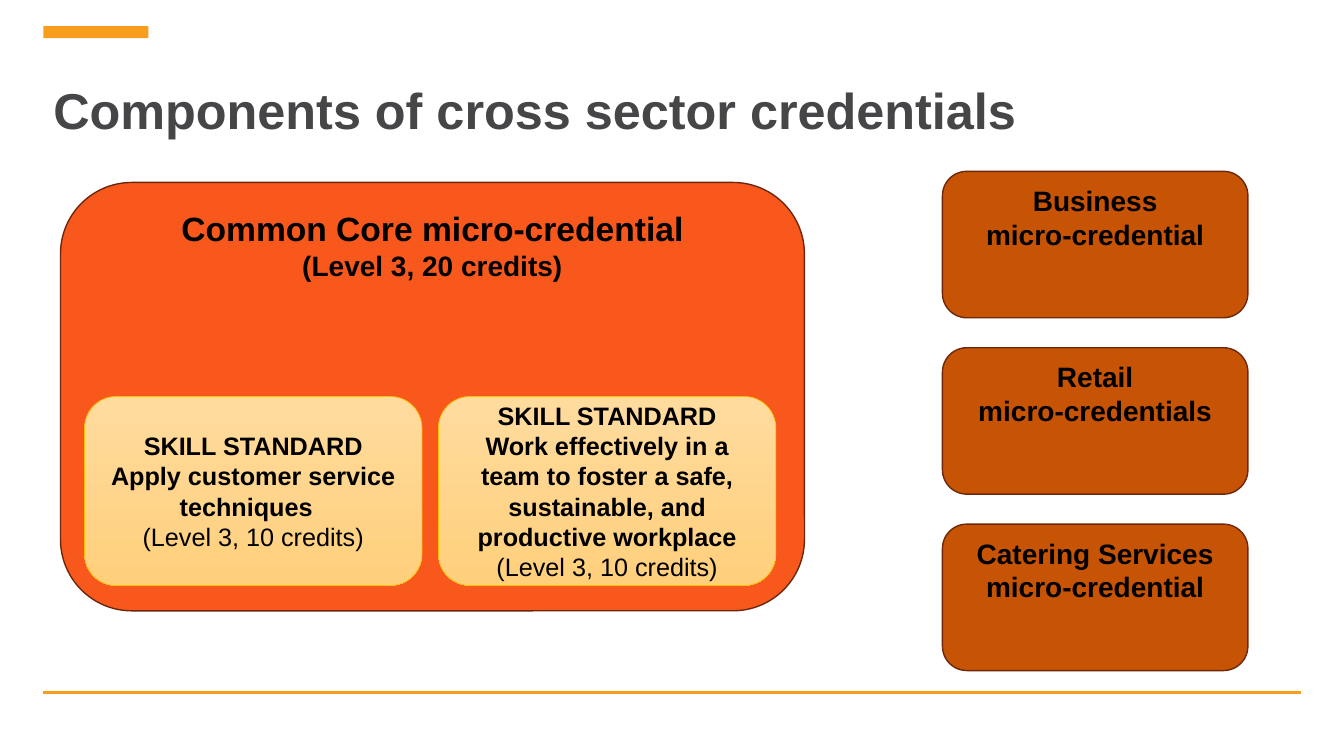
from dataclasses import dataclass

from lxml import etree
from pptx import Presentation
from pptx.dml.color import RGBColor as RGB
from pptx.enum.shapes import MSO_CONNECTOR as CONN, MSO_SHAPE as SHAPE
from pptx.enum.text import MSO_ANCHOR as ANCHOR, PP_ALIGN as ALIGN
from pptx.oxml.ns import qn
from pptx.util import Pt


@dataclass(frozen=True)
class Theme:
    font: str = "Arial"
    ink: str = "000000"
    title: str = "464547"
    accent: str = "F99D1C"
    core: str = "F9581D"
    sector: str = "C65404"
    edge: str = "6D270D"
    skill: tuple = ("FFDB9E", "FFD07C")
    skill_edge: str = "FFC000"
    title_size: int = 36
    core_size: int = 24
    sector_size: int = 20
    skill_size: int = 18


class Deck:
    """Draws themed elements on one slide, with all lengths in points."""

    def __init__(self, theme):
        self.t = theme
        self.prs = Presentation()
        self.prs.slide_width, self.prs.slide_height = Pt(960), Pt(540)
        self.s = self.prs.slides.add_slide(self.prs.slide_layouts[6])

    def add_text(self, tf, lines, color, align=ALIGN.CENTER, anchor=ANCHOR.TOP):
        tf.word_wrap = True
        tf.vertical_anchor = anchor
        for i, (text, size, bold) in enumerate(lines):
            p = tf.add_paragraph() if i else tf.paragraphs[0]
            p.alignment = align
            r = p.add_run()
            r.text = text
            r.font.name, r.font.size, r.font.bold = self.t.font, Pt(size), bold
            r.font.color.rgb = RGB.from_string(color)

    def title(self, text, x, y, w, h):
        tf = self.s.shapes.add_textbox(Pt(x), Pt(y), Pt(w), Pt(h)).text_frame
        line = (text, self.t.title_size, True)
        self.add_text(tf, [line], self.t.title, ALIGN.LEFT, ANCHOR.MIDDLE)
        tf.paragraphs[0].line_spacing = 0.9

    def rule(self, x1, x2, y, width):
        c = self.s.shapes.add_connector(CONN.STRAIGHT, Pt(x1), Pt(y), Pt(x2), Pt(y))
        c.line.color.rgb = RGB.from_string(self.t.accent)
        c.line.width = Pt(width)
        etree.SubElement(c._element.spPr, qn("a:effectLst"))

    def shape(self, kind, x, y, w, h, edge=None, width=1):
        sp = self.s.shapes.add_shape(kind, Pt(x), Pt(y), Pt(w), Pt(h))
        sp.shadow.inherit = False
        if edge:
            sp.line.color.rgb = RGB.from_string(edge)
            sp.line.width = Pt(width)
        else:
            sp.line.fill.background()
        return sp

    def bar(self, x, y, w, h):
        sp = self.shape(SHAPE.RECTANGLE, x, y, w, h)
        sp.fill.solid()
        sp.fill.fore_color.rgb = RGB.from_string(self.t.accent)

    def credential(self, x, y, w, h, fill, lines):
        sp = self.shape(SHAPE.FLOWCHART_ALTERNATE_PROCESS, x, y, w, h, self.t.edge)
        sp.fill.solid()
        sp.fill.fore_color.rgb = RGB.from_string(fill)
        self.add_text(sp.text_frame, lines, self.t.ink)

    def skill(self, x, y, w, h, name, level):
        sp = self.shape(SHAPE.ROUNDED_RECTANGLE, x, y, w, h, self.t.skill_edge, 0.5)
        sp.fill.gradient()
        sp.fill.gradient_angle = 270
        for i, (stop, color) in enumerate(zip(sp.fill.gradient_stops, self.t.skill)):
            stop.position = i
            stop.color.rgb = RGB.from_string(color)
        size = self.t.skill_size
        lines = [("SKILL STANDARD", size, True), (name, size, True), (level, size, False)]
        self.add_text(sp.text_frame, lines, self.t.ink, anchor=ANCHOR.MIDDLE)


def main():
    t = Theme()
    deck = Deck(t)
    deck.bar(31, 18.7, 75, 8.6)
    deck.rule(31, 929.5, 494.6, 2.25)
    deck.title("Components of cross sector credentials", 31, 28.8, 723, 104.4)

    core = [("Common Core micro-credential", t.core_size, True),
            ("(Level 3, 20 credits)", t.sector_size, True)]
    deck.credential(43.2, 130.3, 531.4, 306, t.core, core)

    skills = ["Apply customer service techniques  ",
              "Work effectively in a team to foster a safe, sustainable, "
              "and productive workplace"]
    for i, name in enumerate(skills):
        deck.skill(60.4 + 252.8 * i, 283.2, 241, 135, name, "(Level 3, 10 credits)")

    sectors = [["Business", "micro-credential"],
               ["Retail", "micro-credentials"],
               ["Catering Services micro-credential"]]
    for i, texts in enumerate(sectors):
        lines = [(text, t.sector_size, True) for text in texts]
        deck.credential(673.2, 122.4 + 126 * i, 218.2, 104.6, t.sector, lines)

    deck.prs.save("out.pptx")


if __name__ == "__main__":
    main()
